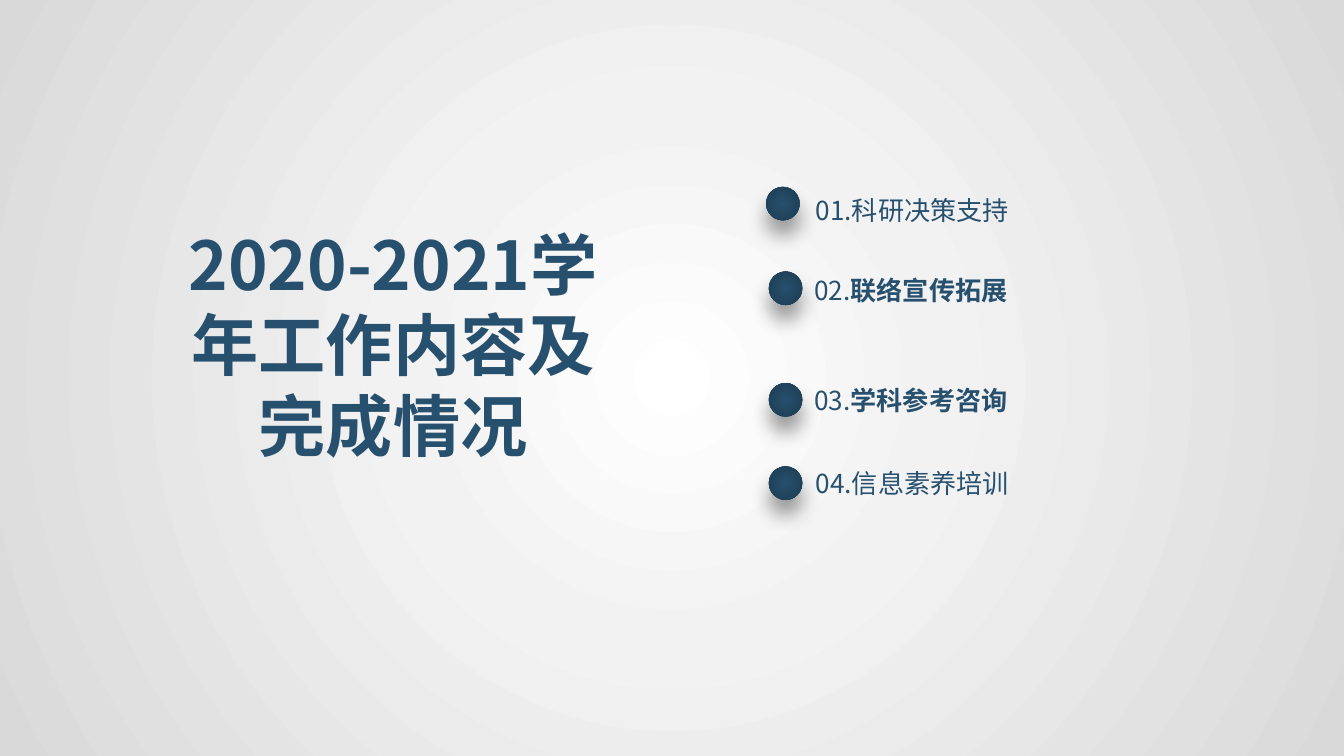
"""Build the agenda slide on the 2020-2021 academic year's work."""
import dataclasses

import lxml.etree
import pptx
import pptx.dml.color
import pptx.enum.shapes
import pptx.enum.text
import pptx.oxml
import pptx.oxml.ns
import pptx.util

Inches = pptx.util.Inches


@dataclasses.dataclass(frozen=True)
class Theme:
    """Colours, font and type sizes of the slide."""

    ink: str = "27506E"
    dot_stops: tuple = ((0, "27506E"), (100, "1D3C52"))
    page_stops: tuple = ((0, "FFFFFF"), (35, "F2F2F2"), (100, "D9D9D9"))
    font: str = "Noto Sans CJK SC"
    title_size: int = 36
    item_size: int = 14


class SlideBuilder:
    """Draws styled elements on the current slide."""

    def __init__(self, page, theme):
        """Keep the slide and its theme."""
        self.page = page
        self.theme = theme

    def radial_fill(self, fill, stops):
        """Turn a fill into a circular gradient spreading from the centre."""
        fill.gradient()
        gradient = fill._xPr.find(pptx.oxml.ns.qn("a:gradFill"))
        stop_xml = "".join(
            f'<a:gs pos="{place * 1000}"><a:srgbClr val="{colour}"/></a:gs>'
            for place, colour in stops
        )
        radial = pptx.oxml.parse_xml(
            f'<a:gradFill {pptx.oxml.ns.nsdecls("a")} rotWithShape="1">'
            f"<a:gsLst>{stop_xml}</a:gsLst>"
            '<a:path path="circle"><a:fillToRect l="50000" t="50000" r="50000" b="50000"/></a:path>'
            "</a:gradFill>"
        )
        gradient.getparent().replace(gradient, radial)

    def background(self):
        """Fill the page with its gradient."""
        self.radial_fill(self.page.background.fill, self.theme.page_stops)

    def dot(self, left, top, size=0.25):
        """Add a round marker with a soft shadow below it."""
        dot = self.page.shapes.add_shape(
            pptx.enum.shapes.MSO_SHAPE.OVAL,
            Inches(left), Inches(top), Inches(size), Inches(size),
        )
        dot.line.fill.background()
        self.radial_fill(dot.fill, self.theme.dot_stops)
        dot.shadow.inherit = False
        effects = dot._element.spPr.find(pptx.oxml.ns.qn("a:effectLst"))
        effects.append(pptx.oxml.parse_xml(
            f'<a:outerShdw {pptx.oxml.ns.nsdecls("a")} blurRad="{pptx.util.Pt(11)}" '
            f'dist="{pptx.util.Pt(8)}" dir="5400000" algn="t" rotWithShape="0">'
            '<a:srgbClr val="000000"><a:alpha val="40000"/></a:srgbClr></a:outerShdw>'
        ))

    def text(self, left, top, width, height, spans, size, align):
        """Add a wrapping text box from (words, bold) spans."""
        box = self.page.shapes.add_textbox(
            Inches(left), Inches(top), Inches(width), Inches(height)
        )
        frame = box.text_frame
        frame.word_wrap = True
        frame.auto_size = pptx.enum.text.MSO_AUTO_SIZE.SHAPE_TO_FIT_TEXT
        para = frame.paragraphs[0]
        para.alignment = align
        para.font.size = pptx.util.Pt(size)
        para.font.name = self.theme.font
        para.font.color.rgb = pptx.dml.color.RGBColor.from_string(self.theme.ink)
        for words, bold in spans:
            span = para.add_run()
            span.text = words
            span.font.bold = bold
            east_asian = lxml.etree.SubElement(
                span.font._element, pptx.oxml.ns.qn("a:ea")
            )
            east_asian.set("typeface", self.theme.font)


def main():
    """Build and save the slide."""
    deck = pptx.Presentation()
    deck.slide_width = Inches(10)
    deck.slide_height = Inches(10 * 9 / 16)
    theme = Theme()
    builder = SlideBuilder(deck.slides.add_slide(deck.slide_layouts[6]), theme)
    align = pptx.enum.text.PP_ALIGN

    builder.background()
    agenda = [
        ("科研决策支持", False, 5.7, 1.39, 5.97, 1.4),
        ("联络宣传拓展", True, 5.72, 2.02, 5.96, 1.99),
        ("学科参考咨询", True, 5.72, 2.85, 5.96, 2.81),
        ("信息素养培训", False, 5.72, 3.47, 5.97, 3.43),
    ]
    for number, (topic, bold, dot_left, dot_top, left, top) in enumerate(agenda, 1):
        builder.dot(dot_left, dot_top)
        if bold:
            spans = [(f"{number:02}.", False), (topic, True)]
        else:
            spans = [(f"{number:02}.{topic}", False)]
        builder.text(left, top, 1.66, 0.34, spans, theme.item_size, align.LEFT)
    title = [("2020-2021学年工作内容及完成情况", True)]
    builder.text(1.18, 1.61, 3.49, 1.92, title, theme.title_size, align.CENTER)
    deck.save("out.pptx")


if __name__ == "__main__":
    main()
